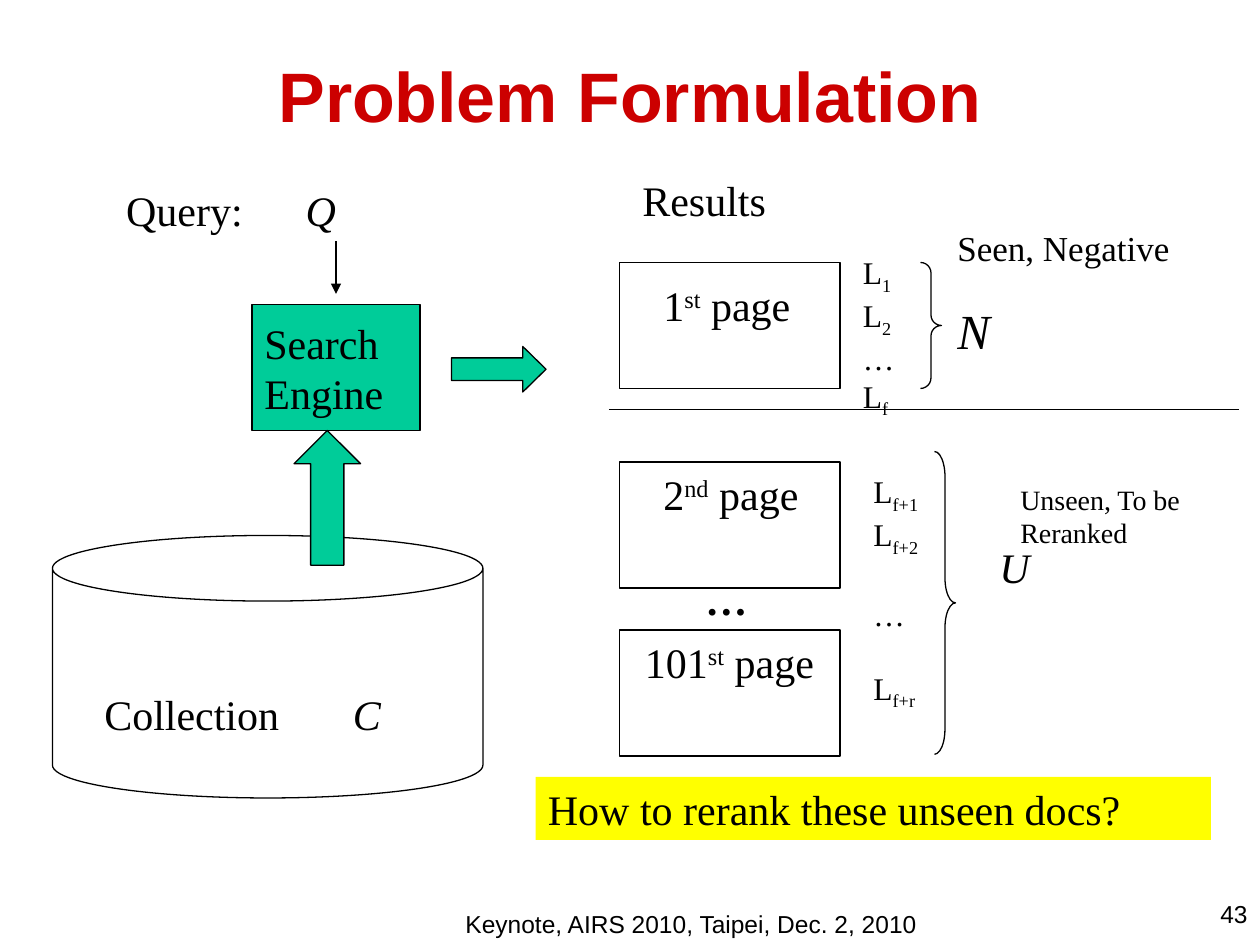
from dataclasses import dataclass

from lxml import etree
from pptx import Presentation
from pptx.dml.color import RGBColor
from pptx.enum.shapes import MSO_CONNECTOR, MSO_SHAPE
from pptx.enum.text import MSO_ANCHOR, PP_ALIGN
from pptx.oxml.ns import qn
from pptx.util import Pt

RECT, CAN, BRACE = MSO_SHAPE.RECTANGLE, MSO_SHAPE.CAN, MSO_SHAPE.RIGHT_BRACE
RIGHT_ARROW, UP_ARROW = MSO_SHAPE.RIGHT_ARROW, MSO_SHAPE.UP_ARROW
STRAIGHT = MSO_CONNECTOR.STRAIGHT
LEFT, CENTER, RIGHT = PP_ALIGN.LEFT, PP_ALIGN.CENTER, PP_ALIGN.RIGHT
TOP, MIDDLE = MSO_ANCHOR.TOP, MSO_ANCHOR.MIDDLE


@dataclass(frozen=True)
class Theme:
    ink: RGBColor = RGBColor(0, 0, 0)
    title: RGBColor = RGBColor(0xCC, 0, 0)
    engine: RGBColor = RGBColor(0, 0xCC, 0x99)
    highlight: RGBColor = RGBColor(0xFF, 0xFF, 0)
    sans: str = "Arial"
    serif: str = "Times New Roman"
    title_size: int = 40
    symbol_size: int = 28
    body_size: int = 24
    note_size: int = 20
    list_size: int = 18
    remark_size: int = 16
    footer_size: int = 14
    line: float = 0.75


THEME = Theme()
BASELINES = {"sup": "30000", "sub": "-25000"}


def write(shape, paragraphs, *, size=THEME.body_size, font=THEME.serif,
          color=THEME.ink, bold=False, align=LEFT, anchor=TOP, wrap=True,
          tab=None, gaps=None):
    """Fill a shape; a paragraph is a list of (text, style) runs.

    Styles are "", "i", "sup" and "sub"; gaps maps a paragraph index to
    its space before; tab is one tab stop for all paragraphs.
    """
    frame = shape.text_frame
    frame.word_wrap, frame.vertical_anchor = wrap, anchor
    for index, runs in enumerate(paragraphs):
        paragraph = frame.paragraphs[0] if index == 0 else frame.add_paragraph()
        if tab:
            stops = etree.SubElement(paragraph._p.get_or_add_pPr(), qn("a:tabLst"))
            etree.SubElement(stops, qn("a:tab"), pos=str(Pt(tab)), algn="l")
        paragraph.alignment = align
        if gaps and index in gaps:
            paragraph.space_before = Pt(gaps[index])
        for text, style in runs:
            run = paragraph.add_run()
            run.text = text
            run.font.size, run.font.name = Pt(size), font
            run.font.bold, run.font.italic = bold, style == "i"
            run.font.color.rgb = color
            if style in BASELINES:
                run._r.get_or_add_rPr().set("baseline", BASELINES[style])


def plain(*lines):
    return [[(line, "")] for line in lines]


def add_label(slide, box, paragraphs, **text_format):
    label = slide.shapes.add_textbox(*map(Pt, box))
    write(label, paragraphs, **text_format)
    return label


def add_outline(slide, kind, box, fill=None, adjustments=()):
    shape = slide.shapes.add_shape(kind, *map(Pt, box))
    shape.shadow.inherit = False
    if fill is None:
        shape.fill.background()
    else:
        shape.fill.solid()
        shape.fill.fore_color.rgb = fill
    shape.line.color.rgb, shape.line.width = THEME.ink, Pt(THEME.line)
    for index, value in enumerate(adjustments):
        shape.adjustments[index] = value
    return shape


def add_rule(slide, start, end, arrow=False):
    rule = slide.shapes.add_connector(STRAIGHT, *map(Pt, (*start, *end)))
    rule.line.color.rgb, rule.line.width = THEME.ink, Pt(THEME.line)
    if arrow:
        etree.SubElement(rule.line._get_or_add_ln(), qn("a:tailEnd"), type="triangle")
    etree.SubElement(rule._element.spPr, qn("a:effectLst"))


def build_title(slide, box):
    title = slide.shapes.title
    title.left, title.top, title.width, title.height = map(Pt, box)
    write(title, plain("Problem Formulation"), size=THEME.title_size,
          font=THEME.sans, color=THEME.title, bold=True, align=CENTER,
          anchor=MIDDLE)


def build_search(slide, left, top):
    """Query, search engine and document collection."""
    add_label(slide, (left + 35, top, 145, 36),
              [[("Query:\t", ""), ("Q", "i")]], tab=102.5)
    add_outline(slide, CAN, (left, top + 204, 246, 150), adjustments=(0.25,))
    add_label(slide, (left + 22.5, top + 288, 184, 36),
              [[("Collection\t", ""), ("C", "i")]], tab=142)

    engine = add_outline(slide, RECT, (left + 114, top + 72, 96, 72), THEME.engine)
    write(engine, plain("Search", "Engine"), anchor=MIDDLE)

    # Flow from query and collection through the engine to the results
    add_rule(slide, (left + 162, top + 36), (left + 162, top + 66), arrow=True)
    add_outline(slide, RIGHT_ARROW, (left + 228, top + 96, 54, 26),
                THEME.engine, (0.5, 0.51))
    add_outline(slide, UP_ARROW, (left + 138, top + 144, 38, 77),
                THEME.engine, (0.5, 0.5))


def build_page(slide, left, top, number, suffix, label_dx, label_dy=0):
    """One result page with its ordinal."""
    add_outline(slide, RECT, (left, top, 126, 72))
    add_label(slide, (left + label_dx, top + label_dy, 127, 36),
              [[(number, ""), (suffix, "sup"), (" page", "")]])


def build_results(slide, left, top):
    """Seen results above the rule, unseen results below it."""
    add_label(slide, (left + 12, top, 94, 36), plain("Results"))
    pages = ((54, "1", "st", 18, 6), (168, "2", "nd", 18), (264, "101", "st", 7.5))
    for dy, *page in pages:
        build_page(slide, left + 6, top + dy, *page)
    add_label(slide, (left + 48, top + 228, 38, 36), plain("…"),
              bold=True, wrap=False)
    add_rule(slide, (left, top + 138), (left + 360, top + 138))

    # Seen documents
    seen = [[("L", ""), ("1", "sub")], [("L", ""), ("2", "sub")],
            [("…", "")], [("L", ""), ("f", "sub")]]
    add_label(slide, (left + 138, top + 45, 32, 94), seen,
              size=THEME.list_size, wrap=False)
    add_outline(slide, BRACE, (left + 178, top + 54, 12, 72), adjustments=(0.5, 0.5))
    add_label(slide, (left + 192, top + 30, 180, 31), plain("Seen, Negative"),
              size=THEME.note_size)
    add_label(slide, (left + 192, top + 72, 180, 41), [[("N", "i")]],
              size=THEME.symbol_size)

    # Unseen documents
    unseen = [[("L", ""), ("f+1", "sub")], [("L", ""), ("f+2", "sub")],
              [("…", "")], [("L", ""), ("f+r", "sub")]]
    add_label(slide, (left + 144, top + 170.4, 48, 137), unseen,
              size=THEME.list_size, gaps={2: 20.7, 3: 20.7})
    add_outline(slide, BRACE, (left + 186, top + 162, 12, 173), adjustments=(1.2, 0.5))
    add_label(slide, (left + 216, top + 210, 150, 36), [[("U", "i")]])
    add_label(slide, (left + 228, top + 176, 108, 46),
              plain("Unseen, To be Reranked"), size=THEME.remark_size)


def build_question(slide, box):
    banner = add_label(slide, box, plain("How to rerank these unseen docs?"))
    banner.fill.solid()
    banner.fill.fore_color.rgb = THEME.highlight


def build_footer(slide, left, top):
    small = {"size": THEME.footer_size, "font": THEME.sans}
    add_label(slide, (left + 340, top, 150, 36), plain("43"), align=RIGHT, **small)
    add_label(slide, (left, top + 6, 330, 30),
              plain("Keynote, AIRS 2010, Taipei, Dec. 2, 2010"), align=CENTER, **small)


def main():
    deck = Presentation()
    deck.slide_width, deck.slide_height = Pt(720), Pt(540)
    slide = deck.slides.add_slide(deck.slide_layouts.get_by_name("Title Only"))
    build_title(slide, (0, 12, 720, 84))
    build_search(slide, 30, 102)
    build_results(slide, 348, 96)
    build_question(slide, (306, 444, 386, 36))
    build_footer(slide, 230, 510)
    deck.save("out.pptx")


if __name__ == "__main__":
    main()
